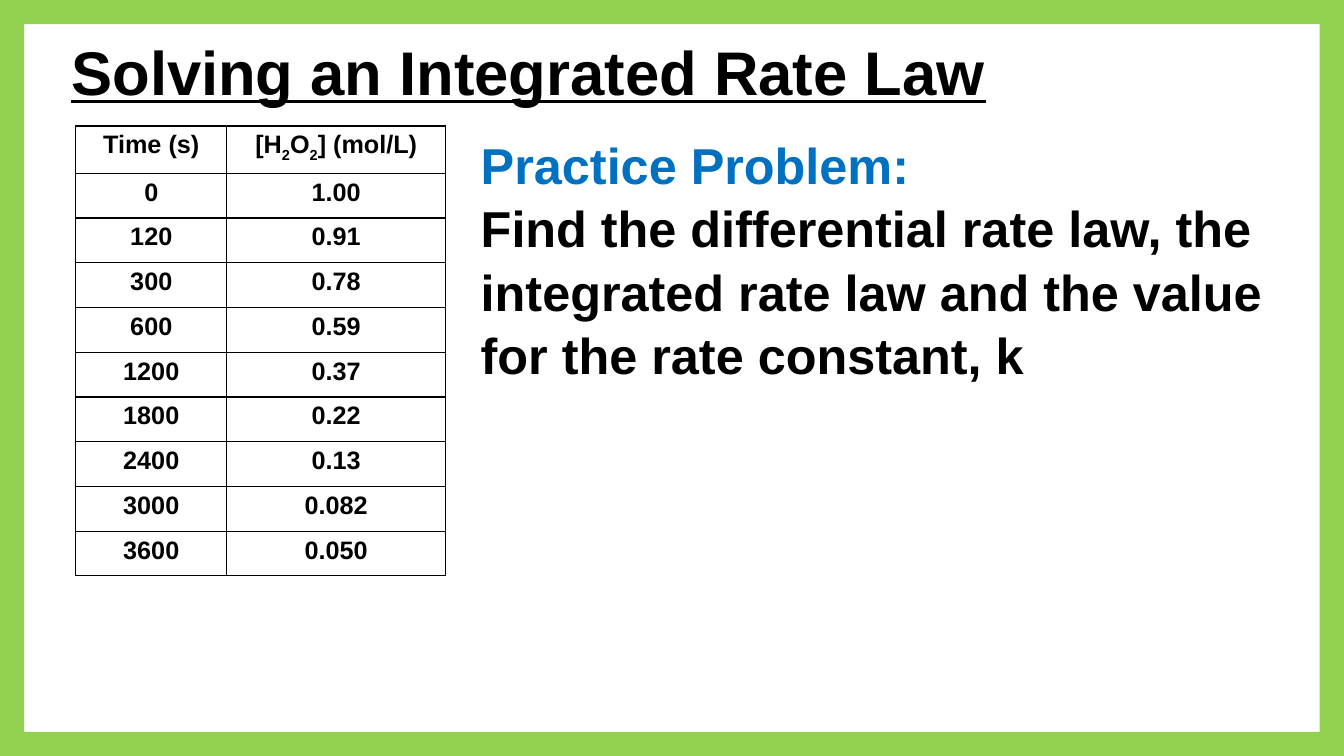
from dataclasses import dataclass

from lxml import etree
from pptx import Presentation
from pptx.dml.color import RGBColor
from pptx.enum.shapes import MSO_SHAPE
from pptx.enum.text import MSO_ANCHOR, PP_ALIGN
from pptx.oxml.ns import qn
from pptx.util import Inches, Pt

FRAME = MSO_SHAPE.FRAME
CENTER = PP_ALIGN.CENTER
TOP, MIDDLE = MSO_ANCHOR.TOP, MSO_ANCHOR.MIDDLE
BLACK = RGBColor(0x00, 0x00, 0x00)
WHITE = RGBColor(0xFF, 0xFF, 0xFF)
BLUE = RGBColor(0x00, 0x70, 0xC0)
GREEN = RGBColor(0x92, 0xD0, 0x50)
FONT = "Arial"


@dataclass
class Run:
    text: str
    size: float
    color: RGBColor = BLACK
    underline: bool = False
    subscript: bool = False


@dataclass
class TextBlock:
    left: float
    top: float
    width: float
    height: float
    lines: list[Run]
    anchor: MSO_ANCHOR = TOP
    line_spacing: float = 1.0


CELL_SIZE = 18
HEADER = [
    [Run("Time (s)", CELL_SIZE)],
    [Run(text, CELL_SIZE, subscript=text == "2")
     for text in ("[H", "2", "O", "2", "] (mol/L)")],
]
READINGS = [
    ("0", "1.00"), ("120", "0.91"), ("300", "0.78"),
    ("600", "0.59"), ("1200", "0.37"), ("1800", "0.22"),
    ("2400", "0.13"), ("3000", "0.082"), ("3600", "0.050"),
]
COLUMN_WIDTHS = (1.5, 2.17)
HEADER_HEIGHT, ROW_HEIGHT = 0.47, 0.444

PROBLEM = TextBlock(4.67, 1.25, 8, 2.52, [
    Run("Practice Problem:", 36, BLUE),
    Run("Find the differential rate law, the integrated rate law "
        "and the value for the rate constant, k", 36),
], line_spacing=1.05)
TITLE = TextBlock(0.61, 0.23, 11.48, 0.94, [
    Run("Solving an Integrated Rate Law", 44, underline=True),
], anchor=MIDDLE)


def add_run(p, run: Run) -> None:
    r = p.add_run()
    r.text = run.text
    font = r.font
    font.name, font.size, font.bold = FONT, Pt(run.size), True
    font.color.rgb = run.color
    if run.underline:
        font.underline = True
    if run.subscript:
        r._r.get_or_add_rPr().set("baseline", "-25000")


def add_text(s, block: TextBlock) -> None:
    box = s.shapes.add_textbox(Inches(block.left), Inches(block.top),
                               Inches(block.width), Inches(block.height))
    tf = box.text_frame
    tf.word_wrap = True
    tf.vertical_anchor = block.anchor
    for i, line in enumerate(block.lines):
        p = tf.add_paragraph() if i else tf.paragraphs[0]
        p.line_spacing = block.line_spacing
        add_run(p, line)


def set_space_before(p, percent: int) -> None:
    spacing = etree.SubElement(p._p.get_or_add_pPr(), qn("a:spcBef"))
    etree.SubElement(spacing, qn("a:spcPct"), val=str(percent * 1000))


def set_borders(cell, color: RGBColor, width: float) -> None:
    """Draw all four edges; the lines must come before the cell's fill."""
    tcPr = cell._tc.get_or_add_tcPr()
    for i, side in enumerate(("a:lnL", "a:lnR", "a:lnT", "a:lnB")):
        ln = etree.Element(qn(side), w=str(Pt(width)))
        fill = etree.SubElement(ln, qn("a:solidFill"))
        etree.SubElement(fill, qn("a:srgbClr"), val=str(color))
        tcPr.insert(i, ln)


def fill_cell(cell, runs: list[Run]) -> None:
    cell.fill.solid()
    cell.fill.fore_color.rgb = WHITE
    set_borders(cell, BLACK, 1)
    p = cell.text_frame.paragraphs[0]
    p.alignment = CENTER
    set_space_before(p, 20)
    for run in runs:
        add_run(p, run)


def add_readings_table(s) -> None:
    rows = [HEADER] + [[[Run(text, CELL_SIZE)] for text in reading]
                       for reading in READINGS]
    height = HEADER_HEIGHT + ROW_HEIGHT * len(READINGS)
    table = s.shapes.add_table(
        len(rows), len(COLUMN_WIDTHS), Inches(0.75), Inches(1.25),
        Inches(sum(COLUMN_WIDTHS)), Inches(height)).table
    table.horz_banding = False
    for column, width in zip(table.columns, COLUMN_WIDTHS):
        column.width = Inches(width)
    for i, row in enumerate(rows):
        table.rows[i].height = Inches(ROW_HEIGHT if i else HEADER_HEIGHT)
        for j, runs in enumerate(row):
            fill_cell(table.cell(i, j), runs)


def add_frame(s, width: int, height: int) -> None:
    sp = s.shapes.add_shape(FRAME, 0, 0, width, height)
    sp.adjustments[0] = 0.032
    sp.shadow.inherit = False
    sp.fill.solid()
    sp.fill.fore_color.rgb = GREEN
    sp.line.fill.background()


def main() -> None:
    prs = Presentation()
    prs.slide_width, prs.slide_height = Inches(13.33), Inches(7.5)
    s = prs.slides.add_slide(prs.slide_layouts[6])
    add_readings_table(s)
    add_text(s, PROBLEM)
    add_text(s, TITLE)
    add_frame(s, prs.slide_width, prs.slide_height)
    prs.save("out.pptx")


if __name__ == "__main__":
    main()
